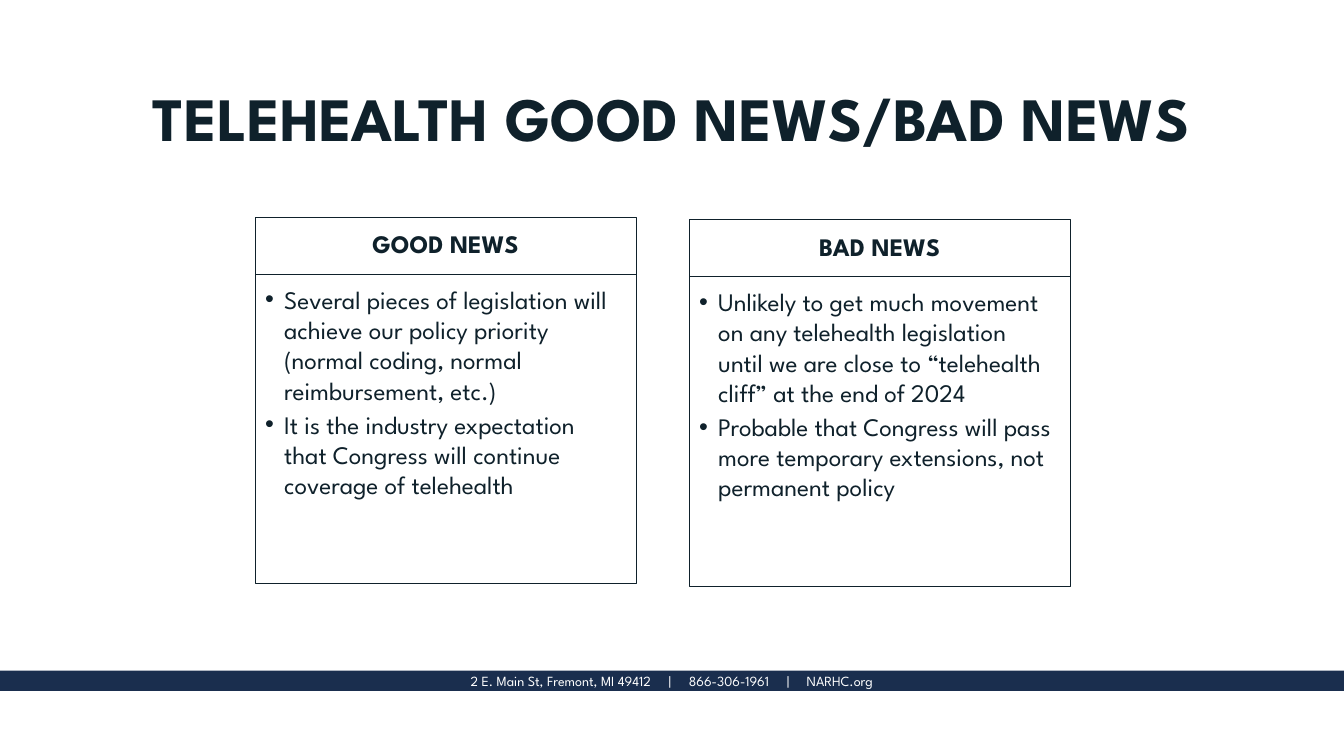
from lxml import etree
from pptx import Presentation, util as u
from pptx.dml.color import RGBColor
from pptx.enum import shapes, text
from pptx.oxml.ns import qn

FONT, INK, NAVY, WHITE = "League Spartan", "0F212B", "1A2E4E", "FFFFFF"


def paint(fmt, color):
    fmt.solid()
    fmt.fore_color.rgb = RGBColor.from_string(color)


def write(p, words, size, color, bold=False):
    r = p.add_run()
    r.text = words
    r.font.name, r.font.size, r.font.bold = FONT, u.Pt(size), bold
    paint(r.font.fill, color)


prs = Presentation()
prs.slide_width, prs.slide_height = u.Cm(33.87), u.Cm(19.05)
s = prs.slides.add_slide(prs.slide_layouts[4])
paint(s.background.fill, WHITE)
ph = {sp.placeholder_format.idx: sp for sp in s.placeholders}

# Footer band
sp = s.shapes.add_shape(shapes.MSO_SHAPE.RECTANGLE, 0, u.Cm(16.9), prs.slide_width, u.Cm(0.51))
sp.shadow.inherit = False
paint(sp.fill, NAVY)
sp.line.fill.background()
tf = sp.text_frame
tf.margin_left, tf.margin_top, tf.margin_bottom = u.Cm(11.86), 0, 0
tf.vertical_anchor = text.MSO_ANCHOR.MIDDLE
p = tf.paragraphs[0]
p.alignment = text.PP_ALIGN.LEFT
tabs = etree.SubElement(p._p.get_or_add_pPr(), qn("a:tabLst"))
for stop in (4.99, 5.5, 7.97, 8.47):
    etree.SubElement(tabs, qn("a:tab"), pos=str(u.Cm(stop)), algn="l")
contact = ["2 E. Main St, Fremont, MI 49412", "866-306-1961", "NARHC.org"]
write(p, "\t|\t".join(contact), 10, WHITE)

# Title
sp = ph[0]
sp.left, sp.top, sp.width, sp.height = u.Cm(2.33), u.Cm(1.22), u.Cm(29.21), u.Cm(3.68)
tf = sp.text_frame
tf.auto_size = text.MSO_AUTO_SIZE.NONE
tf.vertical_anchor = text.MSO_ANCHOR.MIDDLE
p = tf.paragraphs[0]
p.alignment, p.line_spacing = text.PP_ALIGN.CENTER, 0.9
write(p, "TELEHEALTH GOOD NEWS/BAD NEWS", 44, INK, True)

# Two panels, each a heading above a bulleted list
HEAD_H, LIST_H, PANEL_W = 1.44, 7.8, 9.6
panels = [
    (6.43, 5.47, "GOOD NEWS", [
        "Several pieces of legislation will achieve our policy priority "
        "(normal coding, normal reimbursement, etc.)",
        "It is the industry expectation that Congress will continue coverage of telehealth"]),
    (17.37, 5.53, "BAD NEWS", [
        "Unlikely to get much movement on any telehealth legislation until we are close to "
        "“telehealth cliff” at the end of 2024",
        "Probable that Congress will pass more temporary extensions, not permanent policy"]),
]
for i, (left, top, heading, points) in enumerate(panels):
    head, body = ph[2 * i + 1], ph[2 * i + 2]
    for sp, y, h, margins in ((head, top, HEAD_H, (0.36, 0.2, 0.36, 0.2)),
                              (body, top + HEAD_H, LIST_H, (0.25, 0.25, 0.36, 0.41))):
        sp.left, sp.top, sp.width, sp.height = u.Cm(left), u.Cm(y), u.Cm(PANEL_W), u.Cm(h)
        paint(sp.line.fill, INK)
        sp.line.width = u.Pt(0.75)
        tf = sp.text_frame
        tf.auto_size, tf.word_wrap = text.MSO_AUTO_SIZE.NONE, True
        tf.margin_left, tf.margin_top, tf.margin_right, tf.margin_bottom = map(u.Cm, margins)

    head.text_frame.vertical_anchor = text.MSO_ANCHOR.MIDDLE
    p = head.text_frame.paragraphs[0]
    p.alignment, p.line_spacing = text.PP_ALIGN.CENTER, 0.9
    p.space_before, p.space_after = u.Pt(0), u.Pt(6.3)
    write(p, heading, 18, INK, True)

    tf = body.text_frame
    tf.vertical_anchor = text.MSO_ANCHOR.TOP
    for n, point in enumerate(points):
        p = tf.add_paragraph() if n else tf.paragraphs[0]
        pPr = p._p.get_or_add_pPr()
        pPr.set("marL", str(u.Cm(0.48)))
        pPr.set("indent", str(-u.Cm(0.48)))
        etree.SubElement(pPr, qn("a:buChar"), char="•")
        p.space_before, p.space_after = u.Pt(0), u.Pt(2.7)
        write(p, point, 18, INK)

prs.save("out.pptx")
